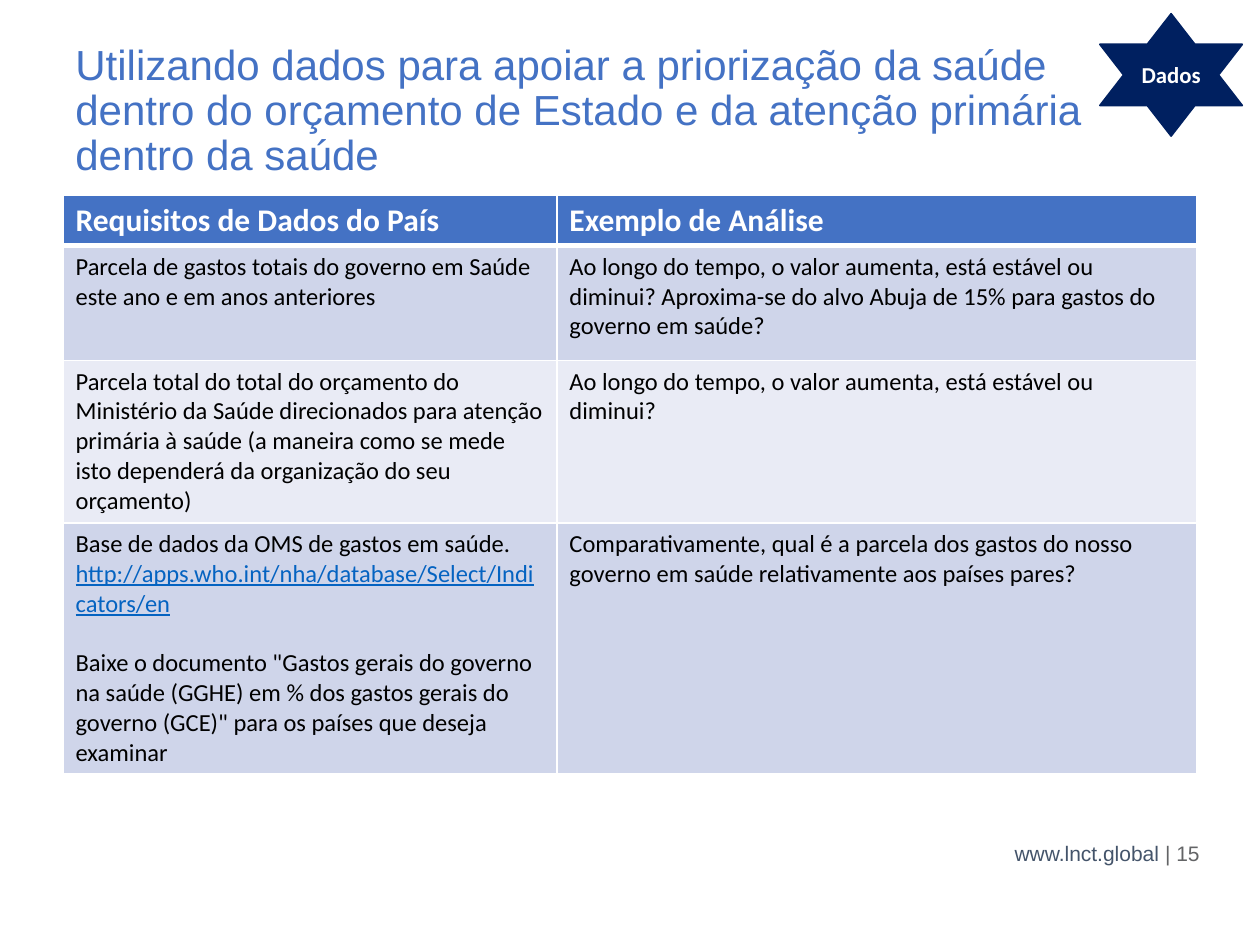
import pptx
import pptx.util
import pptx.dml.color
import pptx.enum.shapes
import pptx.enum.text
from lxml import etree

Inches, Pt = pptx.util.Inches, pptx.util.Pt
RGBColor = pptx.dml.color.RGBColor
PP_ALIGN = pptx.enum.text.PP_ALIGN
ANCHOR = pptx.enum.text.MSO_ANCHOR

BLUE = RGBColor(0x44, 0x72, 0xC4)
NAVY = RGBColor(0x00, 0x20, 0x60)
SLATE = RGBColor(0x44, 0x54, 0x6A)
GRAY = RGBColor(0x63, 0x64, 0x66)
LINK = RGBColor(0x05, 0x63, 0xC1)
BAND_DARK = RGBColor(0xCF, 0xD5, 0xEA)
BAND_LIGHT = RGBColor(0xE9, 0xEB, 0xF5)
WHITE = RGBColor(0xFF, 0xFF, 0xFF)
BLACK = RGBColor(0x00, 0x00, 0x00)

TITLE = ("Utilizando dados para apoiar a priorização da saúde dentro do orçamento "
         "de Estado e da atenção primária dentro da saúde")
HEADERS = ["Requisitos de Dados do País", "Exemplo de Análise"]
ROWS = [
    ["Parcela de gastos totais do governo em Saúde este ano e em anos anteriores",
     "Ao longo do tempo, o valor aumenta, está estável ou diminui? Aproxima-se do "
     "alvo Abuja de 15% para gastos do governo em saúde?"],
    ["Parcela total do total do orçamento do Ministério da Saúde direcionados para "
     "atenção primária à saúde (a maneira como se mede isto dependerá da "
     "organização do seu orçamento)",
     "Ao longo do tempo, o valor aumenta, está estável ou diminui?"],
    ["Base de dados da OMS de gastos em saúde. ",
     "Comparativamente, qual é a parcela dos gastos do nosso governo em saúde "
     "relativamente aos países pares?"],
]
URL = "http://apps.who.int/nha/database/Select/Indicators/en"
DOWNLOAD = ('Baixe o documento "Gastos gerais do governo na saúde (GGHE) em % dos gastos '
            'gerais do governo (GCE)" para os países que deseja examinar')
COL_WIDTHS = [3.92, 5.08]
ROW_HEIGHTS = [0.4, 0.91, 1.29, 1.99]


def add_run(p, text, size, color, font="Calibri", bold=False, underline=False):
    """Append a formatted run to a paragraph."""
    r = p.add_run()
    r.text = text
    r.font.size = Pt(size)
    r.font.name = font
    r.font.color.rgb = color
    r.font.bold = bold
    r.font.underline = underline


def add_text_box(slide, left, top, width, height, anchor=ANCHOR.TOP):
    """Add a wrapping text box and return its first paragraph."""
    tf = slide.shapes.add_textbox(
        Inches(left), Inches(top), Inches(width), Inches(height)).text_frame
    tf.word_wrap = True
    tf.vertical_anchor = anchor
    return tf.paragraphs[0]


def set_borders(cell, bottom):
    """Draw white borders around a cell, with the given bottom width in points."""
    tc_pr = cell._tc.get_or_add_tcPr()
    widths = {"lnL": 1, "lnR": 1, "lnT": 1, "lnB": bottom}
    for i, (tag, width) in enumerate(widths.items()):
        ln = etree.Element(pptx.oxml.ns.qn(f"a:{tag}"), w=str(Pt(width)))
        fill = etree.SubElement(ln, pptx.oxml.ns.qn("a:solidFill"))
        etree.SubElement(fill, pptx.oxml.ns.qn("a:srgbClr"), val=str(WHITE))
        tc_pr.insert(i, ln)


def add_data_table(slide):
    """Add the table of data requirements and sample analyses."""
    table = slide.shapes.add_table(
        len(ROW_HEIGHTS), len(COL_WIDTHS), Inches(0.5), Inches(1.55),
        Inches(sum(COL_WIDTHS)), Inches(sum(ROW_HEIGHTS))).table
    for column, width in zip(table.columns, COL_WIDTHS):
        column.width = Inches(width)
    for i, (height, texts) in enumerate(zip(ROW_HEIGHTS, [HEADERS] + ROWS)):
        table.rows[i].height = Inches(height)
        header = i == 0
        band = BLUE if header else BAND_DARK if i % 2 else BAND_LIGHT
        for j, text in enumerate(texts):
            cell = table.cell(i, j)
            cell.fill.solid()
            cell.fill.fore_color.rgb = band
            set_borders(cell, 3 if header else 1)
            add_run(cell.text_frame.paragraphs[0], text, 18 if header else 14,
                    WHITE if header else BLACK, bold=header)
    tf = table.cell(len(ROWS), 0).text_frame
    add_run(tf.paragraphs[0], URL, 14, LINK, underline=True)
    p = tf.add_paragraph()
    p.space_before = Pt(17)
    add_run(p, DOWNLOAD, 14, BLACK)


def add_badge(slide, text):
    """Add the star badge in the top right corner."""
    sp = slide.shapes.add_shape(
        pptx.enum.shapes.MSO_SHAPE.STAR_6_POINT,
        Inches(8.73), Inches(0.11), Inches(1.13), Inches(0.97))
    sp.shadow.inherit = False
    sp.fill.solid()
    sp.fill.fore_color.rgb = NAVY
    sp.line.color.rgb = NAVY
    sp.line.width = Pt(1)
    tf = sp.text_frame
    tf.margin_left = tf.margin_right = 0
    tf.vertical_anchor = ANCHOR.MIDDLE
    p = tf.paragraphs[0]
    p.alignment = PP_ALIGN.CENTER
    add_run(p, text, 13, WHITE, bold=True)


def main():
    """Build the slide and save it."""
    prs = pptx.Presentation()
    prs.slide_width, prs.slide_height = Inches(10), Inches(7.5)
    slide = prs.slides.add_slide(prs.slide_layouts[6])

    p = add_text_box(slide, 0.5, 0.3, 8.59, 1.25)
    p.line_spacing = 0.9
    add_run(p, TITLE, 24, BLUE, "Arial")

    add_data_table(slide)

    p = add_text_box(slide, 7.29, 6.57, 2.33, 0.4, ANCHOR.MIDDLE)
    p.alignment = PP_ALIGN.RIGHT
    add_run(p, "www.lnct.global ", 12, SLATE, "Arial")
    add_run(p, "| 15", 12, GRAY, "Arial")

    add_badge(slide, "Dados")
    prs.save("out.pptx")


if __name__ == "__main__":
    main()
